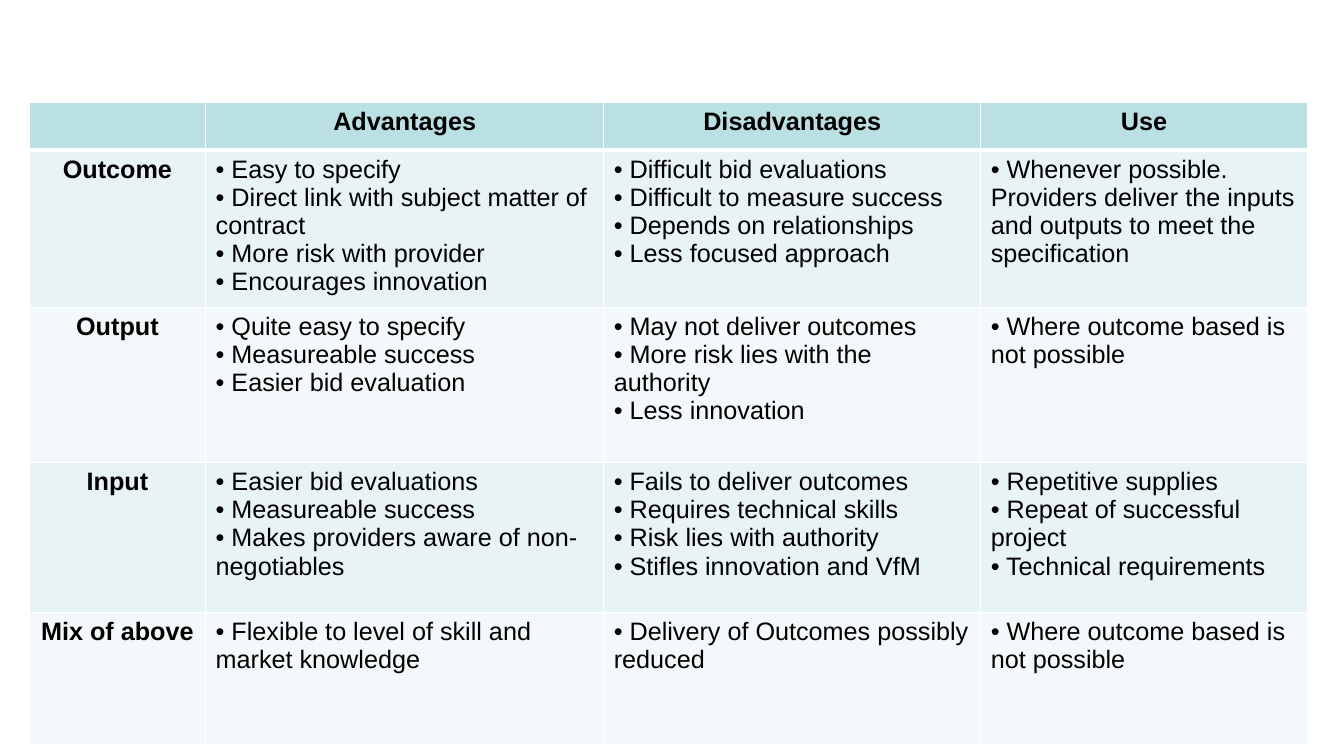
"""Build a slide comparing outcome, output, input and mixed specifications."""
from dataclasses import dataclass

from lxml import etree
from pptx import Presentation
from pptx.dml.color import RGBColor
from pptx.enum.text import PP_ALIGN
from pptx.oxml.ns import qn
from pptx.util import Pt

CENTER = PP_ALIGN.CENTER
LEFT = PP_ALIGN.LEFT
BLANK_LAYOUT = 6
HEADER_FILL = "BBE0E3"
BAND_FILLS = ("E7F3F4", "F3F9FA")
BORDER = "FFFFFF"
INK = "000000"
COLUMN_WIDTHS = (126, 284.4, 269.28, 233.28)
HEADER_HEIGHT = 33.84
HEADINGS = ("", "Advantages", "Disadvantages", "Use")


@dataclass(frozen=True)
class Approach:
    """One specification approach and its bullet points."""
    name: str
    height: float
    advantages: tuple[str, ...]
    disadvantages: tuple[str, ...]
    uses: tuple[str, ...]


APPROACHES = (
    Approach(
        "Outcome", 112.32,
        ("Easy to specify", "Direct link with subject matter of contract",
         "More risk with provider", "Encourages innovation"),
        ("Difficult bid evaluations", "Difficult to measure success",
         "Depends on relationships", "Less focused approach"),
        ("Whenever possible. Providers deliver the inputs and outputs "
         "to meet the specification",)),
    Approach(
        "Output", 110.88,
        ("Quite easy to specify", "Measureable success", "Easier bid evaluation"),
        ("May not deliver outcomes", "More risk lies with the authority",
         "Less innovation"),
        ("Where outcome based is not possible",)),
    Approach(
        "Input", 107.28,
        ("Easier bid evaluations", "Measureable success",
         "Makes providers aware of non-negotiables"),
        ("Fails to deliver outcomes", "Requires technical skills",
         "Risk lies with authority", "Stifles innovation and VfM"),
        ("Repetitive supplies", "Repeat of successful project",
         "Technical requirements")),
    Approach(
        "Mix of above", 94.32,
        ("Flexible to level of skill and market knowledge",),
        ("Delivery of Outcomes possibly reduced",),
        ("Where outcome based is not possible",)),
)


def color(hex_value: str) -> RGBColor:
    """Turn a hex string into a colour."""
    return RGBColor.from_string(hex_value)


def style_cell(cell, fill: str, top: float = 1, bottom: float = 1) -> None:
    """Give a cell its white borders and its fill."""
    properties = cell._tc.get_or_add_tcPr()
    for side, width in (("L", 1), ("R", 1), ("T", top), ("B", bottom)):
        line = etree.SubElement(properties, qn(f"a:ln{side}"), w=str(Pt(width)))
        solid = etree.SubElement(line, qn("a:solidFill"))
        etree.SubElement(solid, qn("a:srgbClr"), val=BORDER)
    cell.fill.solid()
    cell.fill.fore_color.rgb = color(fill)


def write_paragraph(paragraph, text: str, bold: bool, alignment: PP_ALIGN) -> None:
    """Write one line of table text."""
    paragraph.text = text
    paragraph.alignment = alignment
    for run in paragraph.runs:
        run.font.name = "Arial"
        run.font.size = Pt(18)
        run.font.bold = bold
        run.font.color.rgb = color(INK)


def write_label(cell, label: str) -> None:
    """Write a centred bold heading."""
    write_paragraph(cell.text_frame.paragraphs[0], label, True, CENTER)


def write_bullets(cell, points: tuple[str, ...]) -> None:
    """Write bullet points whose wrapped lines return to the cell margin."""
    frame = cell.text_frame
    for index, point in enumerate(points):
        paragraph = frame.add_paragraph() if index else frame.paragraphs[0]
        properties = paragraph._p.get_or_add_pPr()
        properties.set("marL", "0")
        properties.set("indent", "0")
        etree.SubElement(properties, qn("a:buFont"), typeface="Arial")
        etree.SubElement(properties, qn("a:buChar"), char="•")
        write_paragraph(paragraph, f" {point}", False, LEFT)


def add_comparison(slide) -> None:
    """Add the table of approaches."""
    heights = (HEADER_HEIGHT, *(approach.height for approach in APPROACHES))
    comparison = slide.shapes.add_table(
        len(heights), len(HEADINGS), Pt(20.88), Pt(73.44),
        Pt(sum(COLUMN_WIDTHS)), Pt(sum(heights))).table
    for column, width in zip(comparison.columns, COLUMN_WIDTHS):
        column.width = Pt(width)
    for row, height in zip(comparison.rows, heights):
        row.height = Pt(height)

    for column, heading in enumerate(HEADINGS):
        cell = comparison.cell(0, column)
        style_cell(cell, HEADER_FILL, bottom=3)
        write_label(cell, heading)

    for row, approach in enumerate(APPROACHES, start=1):
        label, *details = comparison.rows[row].cells
        for cell in (label, *details):
            style_cell(cell, BAND_FILLS[(row - 1) % 2], top=3 if row == 1 else 1)
        write_label(label, approach.name)
        topics = (approach.advantages, approach.disadvantages, approach.uses)
        for cell, points in zip(details, topics):
            write_bullets(cell, points)


def main() -> None:
    """Create and save the presentation."""
    presentation = Presentation()
    presentation.slide_width = Pt(960)
    presentation.slide_height = Pt(540)
    layout = presentation.slide_layouts[BLANK_LAYOUT]
    add_comparison(presentation.slides.add_slide(layout))
    presentation.save("out.pptx")


if __name__ == "__main__":
    main()
